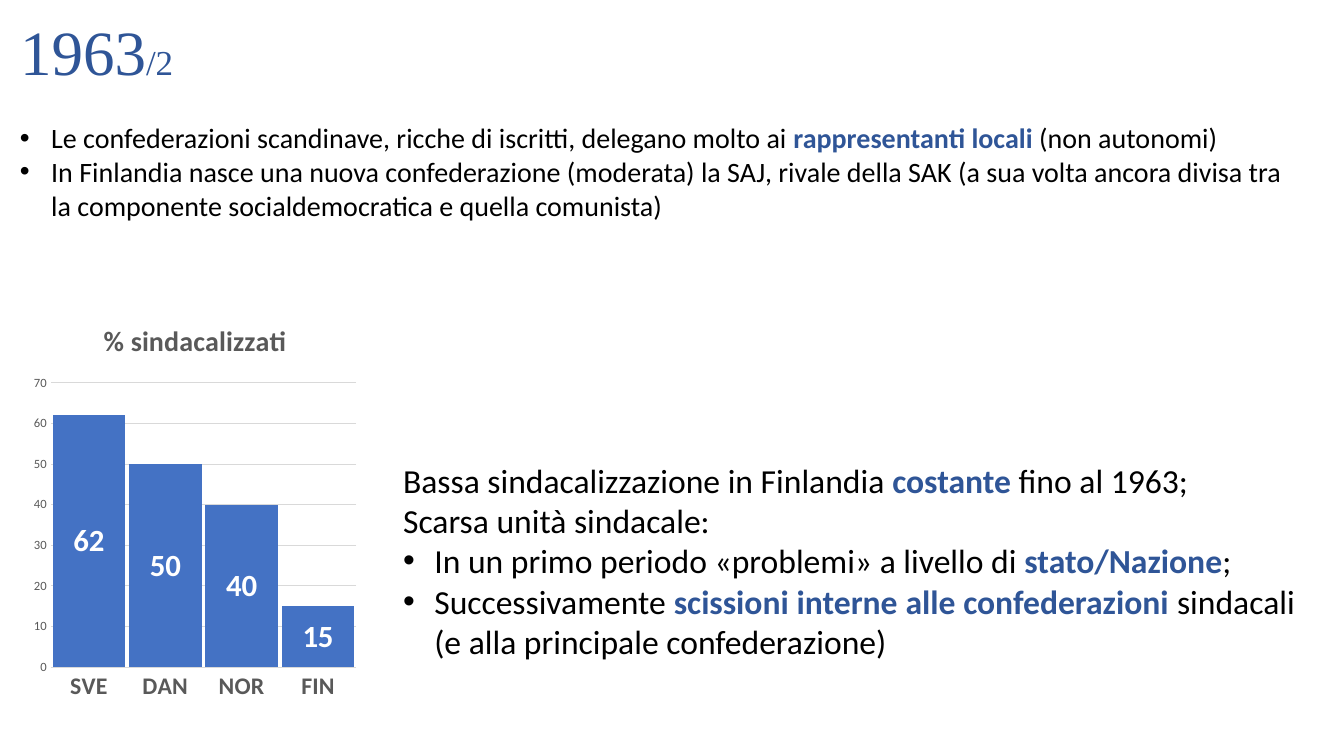
from lxml import etree
from pptx import Presentation
from pptx.chart.data import CategoryChartData
from pptx.dml.color import RGBColor
from pptx.enum.chart import XL_CHART_TYPE, XL_LABEL_POSITION, XL_TICK_MARK
from pptx.enum.text import MSO_AUTO_SIZE, PP_ALIGN
from pptx.oxml.ns import qn
from pptx.util import Inches, Pt

COLUMNS = XL_CHART_TYPE.COLUMN_CLUSTERED
CENTER = XL_LABEL_POSITION.CENTER
NO_TICK = XL_TICK_MARK.NONE
GROW = MSO_AUTO_SIZE.SHAPE_TO_FIT_TEXT
LEFT, JUSTIFY = PP_ALIGN.LEFT, PP_ALIGN.JUSTIFY

COLORS = {
    "text": "000000",
    "accent": "2F5597",
    "bar": "4472C4",
    "label": "FFFFFF",
    "axis": "595959",
    "grid": "D9D9D9",
}
BODY_FONT, TITLE_FONT = "Calibri", "Times New Roman"
HANG = 0.31


class SlideBuilder:
    def __init__(self, slide):
        self.s = slide

    def color(self, name):
        return RGBColor.from_string(COLORS[name])

    def style(self, font, size, color, bold=False, name=BODY_FONT):
        font.name, font.size, font.bold = name, Pt(size), bold
        font.color.rgb = self.color(color)

    def text_box(self, left, top, width, height, wrap=True):
        sp = self.s.shapes.add_textbox(
            Inches(left), Inches(top), Inches(width), Inches(height))
        tf = sp.text_frame
        tf.word_wrap, tf.auto_size = wrap, GROW
        return tf

    def bullet(self, p):
        pPr = p._p.get_or_add_pPr()
        pPr.set("marL", str(Inches(HANG)))
        pPr.set("indent", str(-Inches(HANG)))
        etree.SubElement(pPr, qn("a:buFont")).set("typeface", "Arial")
        etree.SubElement(pPr, qn("a:buChar")).set("char", "•")

    def title(self, box, runs):
        p = self.text_box(*box, wrap=False).paragraphs[0]
        for text, size in runs:
            r = p.add_run()
            r.text = text
            self.style(r.font, size, "accent", name=TITLE_FONT)

    def body(self, box, size, paragraphs, align=LEFT):
        """Each paragraph is (bulleted, pieces); every second piece is emphasised."""
        tf = self.text_box(*box)
        for i, (bulleted, pieces) in enumerate(paragraphs):
            p = tf.add_paragraph() if i else tf.paragraphs[0]
            p.alignment = align
            if bulleted:
                self.bullet(p)
            for j, text in enumerate(pieces):
                r = p.add_run()
                r.text = text
                strong = j % 2 == 1
                self.style(r.font, size, "accent" if strong else "text", strong)

    def column_chart(self, box, title, values):
        data = CategoryChartData()
        data.categories = list(values)
        data.add_series(title, list(values.values()))
        chart = self.s.shapes.add_chart(COLUMNS, *map(Inches, box), data).chart
        self.style(chart.font, 10, "text")
        chart.has_legend = False
        chart.has_title = True
        tf = chart.chart_title.text_frame
        tf.text = title
        self.style(tf.paragraphs[0].runs[0].font, 20, "axis", True)
        chart.chart_title.include_in_layout = False

        for axis, size, bold in ((chart.category_axis, 17, True),
                                 (chart.value_axis, 9, False)):
            axis.major_tick_mark = axis.minor_tick_mark = NO_TICK
            self.style(axis.tick_labels.font, size, "axis", bold)
        chart.value_axis.format.line.fill.background()
        chart.value_axis.has_major_gridlines = True
        for line in (chart.category_axis.format.line,
                     chart.value_axis.major_gridlines.format.line):
            line.color.rgb = self.color("grid")
            line.width = Pt(0.75)

        plot = chart.plots[0]
        plot.gap_width, plot.vary_by_categories = 5, False
        series = plot.series[0]
        series.format.fill.solid()
        series.format.fill.fore_color.rgb = self.color("bar")
        labels = series.data_labels
        labels.show_value, labels.position = True, CENTER
        self.style(labels.font, 22, "label", True)


def main():
    prs = Presentation()
    prs.slide_width, prs.slide_height = Inches(13.33), Inches(7.5)
    b = SlideBuilder(prs.slides.add_slide(prs.slide_layouts[6]))

    b.title((0.1, 0.07, 2.81, 0.86), [("1963", 45), ("/2", 25)])
    b.body((0.1, 1.15, 12.83, 1.11), 20, [
        (True, ["Le confederazioni scandinave, ricche di iscritti, delegano molto ai ",
                "rappresentanti locali ", "(non autonomi)"]),
        (True, ["In Finlandia nasce una nuova confederazione (moderata) la SAJ, "
                "rivale della SAK (a sua volta ancora divisa tra la componente "
                "socialdemocratica e quella comunista)"]),
    ])
    b.body((3.9, 4.51, 9.04, 2.12), 24, [
        (False, ["Bassa sindacalizzazione in Finlandia ", "costante ", "fino al 1963;"]),
        (False, ["Scarsa unità sindacale:"]),
        (True, ["In un primo periodo «problemi» a livello di ", "stato/Nazione", "; "]),
        (True, ["Successivamente ", "scissioni interne alle confederazioni ",
                "sindacali (e alla principale confederazione)"]),
    ], JUSTIFY)
    b.column_chart((0.27, 3, 3.33, 4.03), "% sindacalizzati",
                   {"SVE": 62, "DAN": 50, "NOR": 40, "FIN": 15})

    prs.save("out.pptx")


if __name__ == "__main__":
    main()
